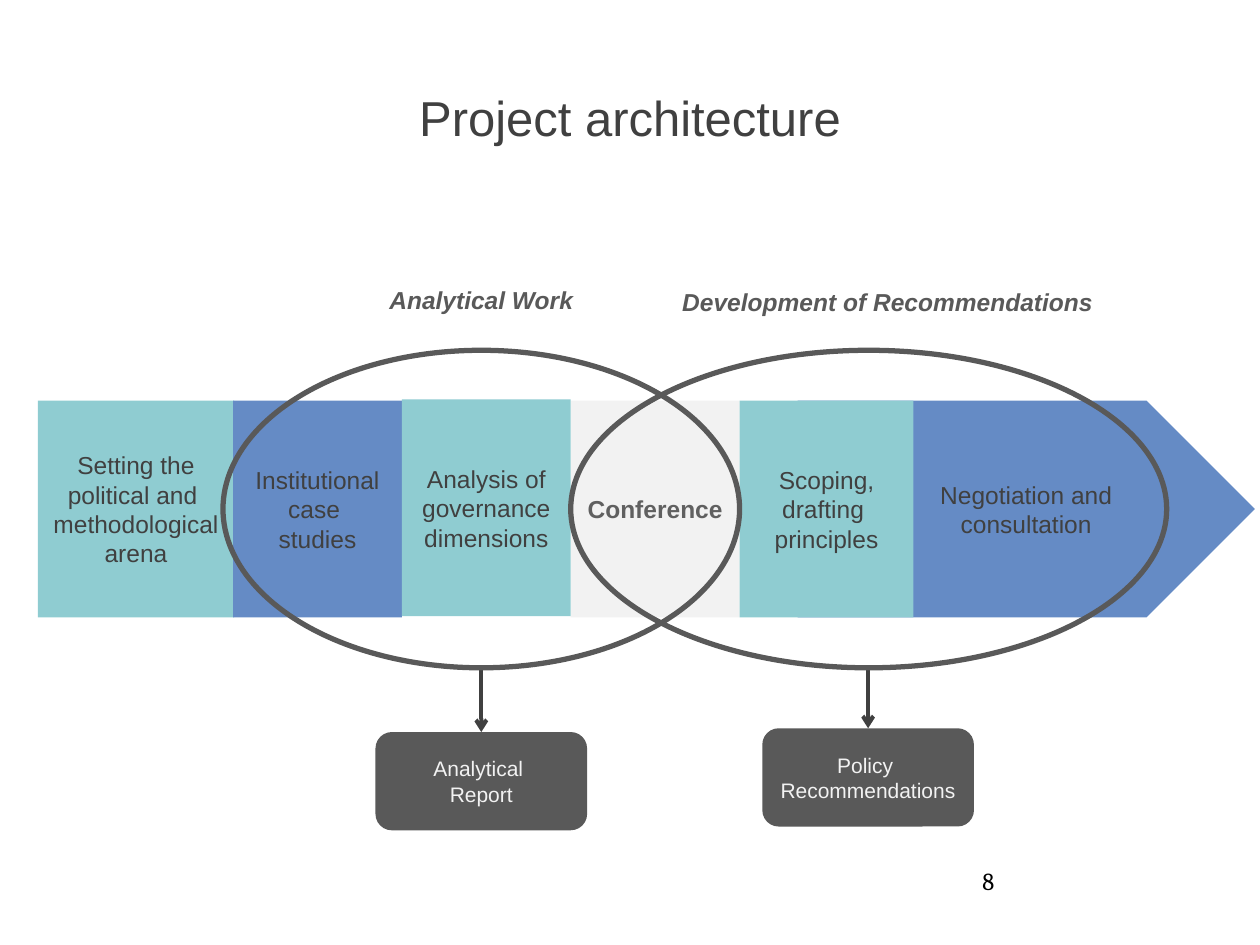
from typing import NamedTuple

from lxml.etree import SubElement
from pptx import Presentation
from pptx.dml.color import RGBColor
from pptx.enum.shapes import MSO_CONNECTOR, MSO_SHAPE
from pptx.enum.text import MSO_ANCHOR, PP_ALIGN
from pptx.oxml.ns import qn
from pptx.util import Inches, Pt

COLORS = {
    "teal": "8FCCD1",
    "blue": "658BC5",
    "light": "F2F2F2",
    "gray": "595959",
    "conference": "606060",
    "dark": "404040",
    "black": "000000",
}
BAND_TOP, BAND_HEIGHT = 3.18, 1.72
ELLIPSE_TOP, ELLIPSE_HEIGHT = 2.78, 2.52


class Style(NamedTuple):
    size: float = 14
    color: str = "dark"
    bold: bool = False
    italic: bool = False
    font: str = "Arial"
    align: PP_ALIGN = PP_ALIGN.CENTER


class Stage(NamedTuple):
    left: float
    width: float
    fill: str
    lines: list[str]
    style: Style = Style()
    top: float = BAND_TOP
    preset: MSO_SHAPE = MSO_SHAPE.RECTANGLE


class Label(NamedTuple):
    left: float
    top: float
    width: float
    height: float
    text: str
    style: Style
    anchor: MSO_ANCHOR = MSO_ANCHOR.TOP


class Phase(NamedTuple):
    """An ellipse over the band and the output box its arrow leads to."""
    left: float
    width: float
    box_left: float
    box_top: float
    output: list[str]


HEADING = Style(color="gray", bold=True, italic=True)
OUTPUT = Style(size=12, color="light")

NEGOTIATION = Stage(6.33, 3.63, "blue", ["Negotiation and consultation"],
                    preset=MSO_SHAPE.CHEVRON)
STAGES = [
    Stage(0.3, 1.56, "teal", ["Setting the political and ", "methodological arena"]),
    Stage(1.85, 1.34, "blue", ["Institutional case ", "studies"]),
    Stage(4.53, 1.34, "light", ["Conference"], Style(color="conference", bold=True)),
    Stage(5.87, 1.38, "teal", ["Scoping, drafting ", "principles"]),
    Stage(3.19, 1.34, "teal", ["Analysis of governance dimensions"], top=3.17),
]
PHASES = [
    Phase(1.77, 4.1, 2.98, 5.81, ["Analytical ", "Report"]),
    Phase(4.53, 4.73, 6.05, 5.78, ["Policy ", "Recommendations"]),
]
LABELS = [
    Label(2.64, 2.21, 2.36, 0.34, "Analytical Work", HEADING),
    Label(4.84, 2.23, 4.41, 0.34, "Development of Recommendations", HEADING),
    Label(0.5, 0.3, 9, 1.25, "Project architecture", Style(size=28), MSO_ANCHOR.MIDDLE),
    Label(6.73, 6.82, 1.26, 0.52, "8",
          Style(color="black", font="Cambria", align=PP_ALIGN.RIGHT)),
]


def rgb(name: str) -> RGBColor:
    return RGBColor.from_string(COLORS[name])


def write(shape, lines: list[str], style: Style, anchor=MSO_ANCHOR.MIDDLE, wrap=True) -> None:
    frame = shape.text_frame
    frame.word_wrap = wrap
    frame.vertical_anchor = anchor
    for index, line in enumerate(lines):
        para = frame.add_paragraph() if index else frame.paragraphs[0]
        para.alignment = style.align
        span = para.add_run()
        span.text = line
        span.font.name = style.font
        span.font.size = Pt(style.size)
        span.font.bold = style.bold
        span.font.italic = style.italic
        span.font.color.rgb = rgb(style.color)


def add_filled(page, preset, left: float, top: float, width: float, height: float, fill: str):
    shape = page.shapes.add_shape(preset, Inches(left), Inches(top),
                                  Inches(width), Inches(height))
    shape.shadow.inherit = False
    shape.fill.solid()
    shape.fill.fore_color.rgb = rgb(fill)
    shape.line.fill.background()
    return shape


def add_stage(page, stage: Stage) -> None:
    shape = add_filled(page, stage.preset, stage.left, stage.top,
                       stage.width, BAND_HEIGHT, stage.fill)
    write(shape, stage.lines, stage.style)


def add_output(page, phase: Phase):
    box = add_filled(page, MSO_SHAPE.ROUNDED_RECTANGLE, phase.box_left,
                     phase.box_top, 1.68, 0.78, "gray")
    write(box, phase.output, OUTPUT, wrap=False)
    return box


def add_arrow(page, phase: Phase, box) -> None:
    """Lead from the bottom of the phase's ellipse to the top of its box."""
    middle = box.left + box.width // 2
    arrow = page.shapes.add_connector(
        MSO_CONNECTOR.STRAIGHT, middle, Inches(ELLIPSE_TOP + ELLIPSE_HEIGHT),
        middle, box.top)
    arrow.end_connect(box, 0)
    arrow.line.color.rgb = rgb("dark")
    arrow.line.width = Pt(2.25)
    SubElement(arrow.line._get_or_add_ln(), qn("a:tailEnd"), type="arrow")
    SubElement(arrow._element.spPr, qn("a:effectLst"))


def add_ellipse(page, phase: Phase) -> None:
    ellipse = page.shapes.add_shape(
        MSO_SHAPE.OVAL, Inches(phase.left), Inches(ELLIPSE_TOP),
        Inches(phase.width), Inches(ELLIPSE_HEIGHT))
    ellipse.shadow.inherit = False
    ellipse.fill.background()
    ellipse.line.color.rgb = rgb("gray")
    ellipse.line.width = Pt(3)


def add_label(page, label: Label) -> None:
    box = page.shapes.add_textbox(Inches(label.left), Inches(label.top),
                                  Inches(label.width), Inches(label.height))
    write(box, [label.text], label.style, label.anchor)


def main() -> None:
    deck = Presentation()
    deck.slide_width, deck.slide_height = Inches(10), Inches(7.5)
    page = deck.slides.add_slide(deck.slide_layouts[6])

    add_stage(page, NEGOTIATION)
    for phase in PHASES:
        add_arrow(page, phase, add_output(page, phase))
    for stage in STAGES:
        add_stage(page, stage)
    for phase in PHASES:
        add_ellipse(page, phase)
    for label in LABELS:
        add_label(page, label)

    deck.save("out.pptx")


if __name__ == "__main__":
    main()
